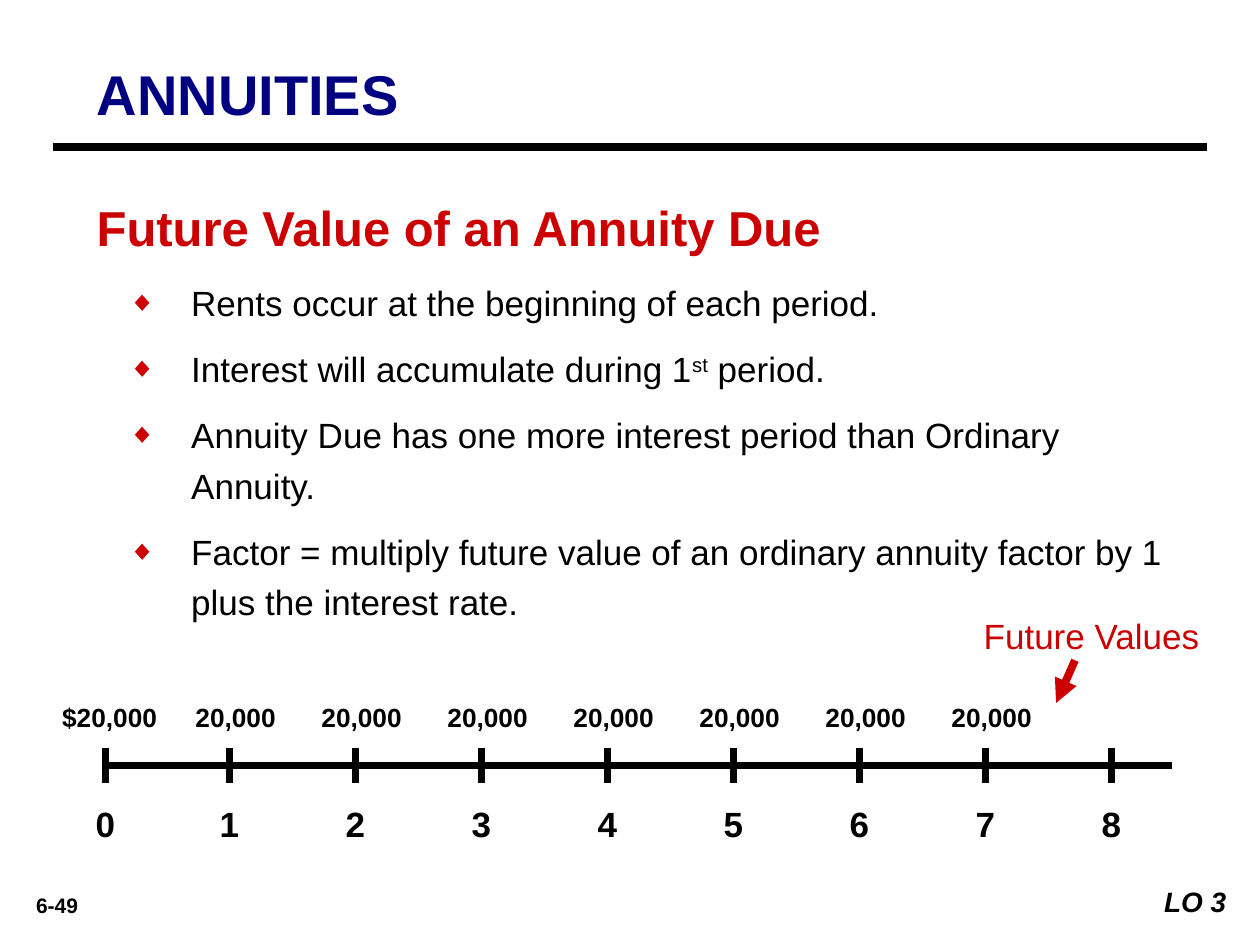
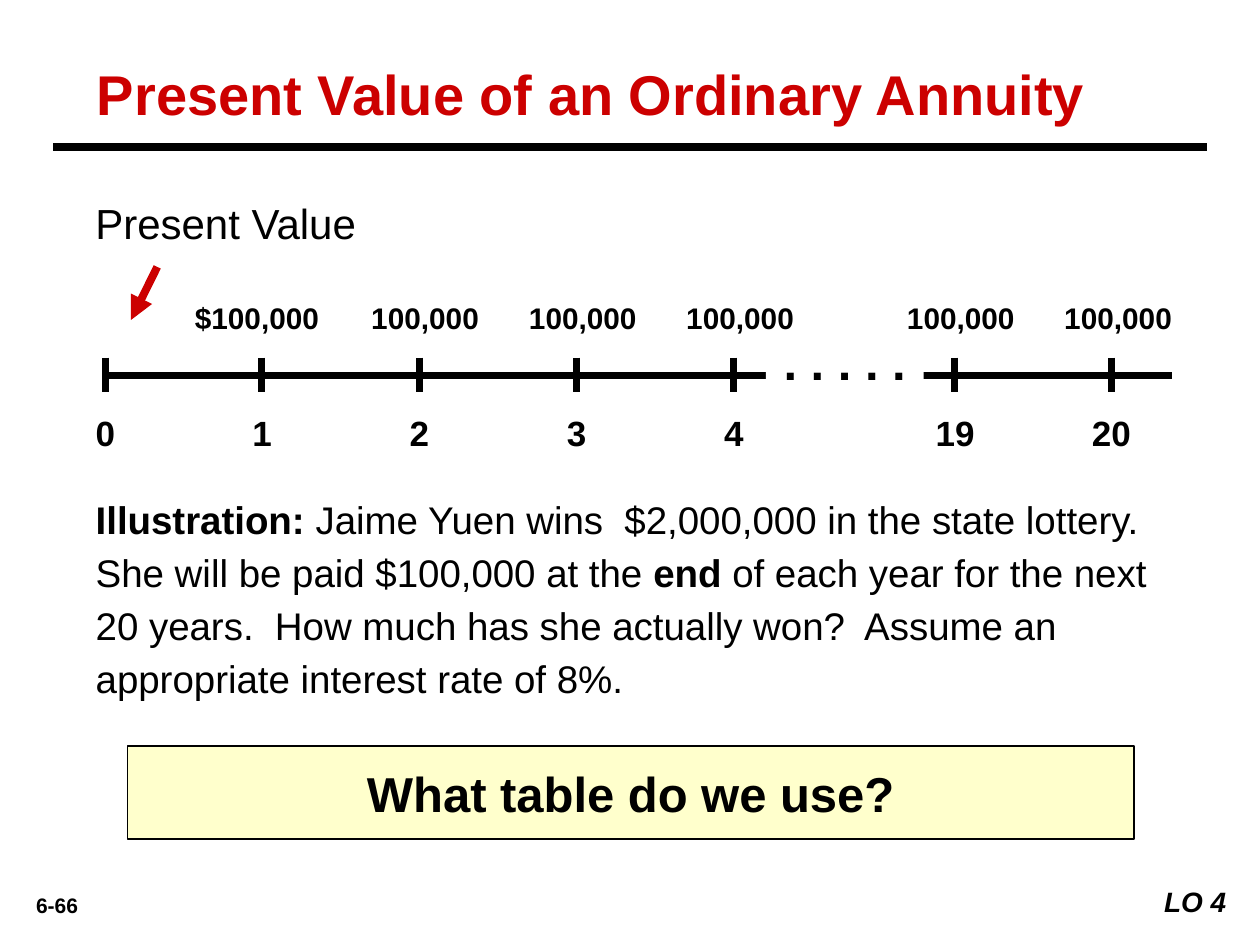
from lxml.etree import SubElement
from pptx import Presentation
from pptx.dml.color import RGBColor
from pptx.enum.shapes import MSO_CONNECTOR as Conn, MSO_SHAPE as Shape
from pptx.enum.text import MSO_ANCHOR as Anchor, MSO_AUTO_SIZE as Fit, PP_ALIGN as Align
from pptx.oxml.ns import qn
from pptx.util import Cm, Pt

BLACK, WHITE, RED, NAVY, CREAM = "000000", "FFFFFF", "CC0000", "000080", "FFFFCC"
TITLE_ONLY, TITLE_AND_BODY = 5, 1


def rgb(hex_text):
    return RGBColor.from_string(hex_text)


class Deck:
    """Holds the style and the current slide."""
    font = "Arial"

    def __init__(self):
        self.prs = Presentation()
        self.prs.slide_width, self.prs.slide_height = Cm(25.4), Cm(19.05)
        self.s = None

    def slide(self, layout, title, color, number, objective):
        """Start a slide with its title, rule and footers."""
        self.s = self.prs.slides.add_slide(self.prs.slide_layouts[layout])
        sp = self.s.shapes.title
        self.place(sp, 1.7, 1.07, 22.86, 1.55)
        self.add_runs(sp.text_frame.paragraphs[0], title, 32, color, True)
        self.line(1.07, 2.97, 24.33, 2.97, 4.5)
        self.text(0.2, 17.86, 1.9, 0.76, number, 12, bold=True)
        self.text(22.86, 17.7, 2.11, 0.94, objective, 16, bold=True, italic=True,
                  align=Align.RIGHT, fill=WHITE)

    def place(self, sp, x, y, w, h, anchor=Anchor.TOP, wrap=True):
        sp.left, sp.top, sp.width, sp.height = Cm(x), Cm(y), Cm(w), Cm(h)
        tf = sp.text_frame
        tf.auto_size, tf.word_wrap, tf.vertical_anchor = Fit.NONE, wrap, anchor

    def add_runs(self, p, runs, size, color=BLACK, bold=False, italic=False,
                 align=Align.LEFT, spacing=1.0):
        """Fill a paragraph; runs is a string or (text, bold, baseline) tuples."""
        p.alignment, p.line_spacing, p.space_before = align, spacing, Pt(0)
        if isinstance(runs, str):
            runs = [(runs, bold, None)]
        for content, is_bold, baseline in runs:
            r = p.add_run()
            r.text = content
            f = r.font
            f.name, f.size, f.bold, f.italic = self.font, Pt(size), is_bold, italic
            f.color.rgb = rgb(color)
            if baseline:
                r._r.get_or_add_rPr().set("baseline", str(baseline))

    def text(self, x, y, w, h, runs, size, color=BLACK, align=Align.CENTER, fill=None,
             border=None, anchor=Anchor.TOP, wrap=True, **style):
        """Add a text box, or a rectangle when it has a fill."""
        box = Cm(x), Cm(y), Cm(w), Cm(h)
        if fill:
            sp = self.s.shapes.add_shape(Shape.RECTANGLE, *box)
            sp.shadow.inherit = False
            sp.fill.solid()
            sp.fill.fore_color.rgb = rgb(fill)
            if border:
                sp.line.color.rgb, sp.line.width = rgb(border), Pt(1)
            else:
                sp.line.fill.background()
        else:
            sp = self.s.shapes.add_textbox(*box)
        self.place(sp, x, y, w, h, anchor, wrap)
        self.add_runs(sp.text_frame.paragraphs[0], runs, size, color, align=align, **style)

    def bullets(self, x, y, w, h, items):
        sp = self.s.placeholders[1]
        self.place(sp, x, y, w, h)
        tf = sp.text_frame
        for i, item in enumerate(items):
            p = tf.add_paragraph() if i else tf.paragraphs[0]
            p.level = 1
            self.add_runs(p, item, 20, spacing=1.2)
            p.space_before = Pt(9)
            pPr = p._p.get_or_add_pPr()
            pPr.set("marL", str(Cm(1.9)))
            pPr.set("indent", str(Cm(-1.27)))
            SubElement(SubElement(pPr, qn("a:buClr")), qn("a:srgbClr")).set("val", RED)
            SubElement(pPr, qn("a:buSzPct")).set("val", "80000")
            SubElement(pPr, qn("a:buFont")).set("typeface", self.font)
            SubElement(pPr, qn("a:buChar")).set("char", "◆")

    def line(self, x1, y1, x2, y2, width, color=BLACK, arrow=False):
        c = self.s.shapes.add_connector(Conn.STRAIGHT, Cm(x1), Cm(y1), Cm(x2), Cm(y2))
        c.line.color.rgb, c.line.width = rgb(color), Pt(width)
        spPr = c._element.spPr
        if arrow:
            SubElement(spPr.find(qn("a:ln")), qn("a:tailEnd")).set("type", "triangle")
        SubElement(spPr, qn("a:effectLst"))

    def timeline(self, y, ticks, amounts, size, rise):
        """Draw an axis; ticks and amounts are (centre, text) pairs."""
        self.line(2.2, y, 23.62, y, 4)
        for x, label in ticks:
            self.line(x, y - 0.35, x, y + 0.35, 4)
            self.text(x - 1.06, y + 0.62, 2.13, 1.09, label, 20, bold=True)
        for x, amount in amounts:
            self.text(x - 1.7, y - rise, 3.4, 0.95, amount, size, bold=True)


def main():
    deck = Deck()

    # Annuity due: rules and timeline of payments
    deck.slide(TITLE_AND_BODY, "ANNUITIES", NAVY, "6-49", "LO 3")
    deck.text(1.7, 3.8, 23.37, 1.42, "Future Value of an Annuity Due", 28, RED,
              Align.LEFT, bold=True, spacing=1.05)
    deck.bullets(1.7, 5.38, 22.02, 7.59, [
        "Rents occur at the beginning of each period.",
        [("Interest will accumulate during 1", False, None), ("st", False, 30000),
         (" period.", False, None)],
        "Annuity Due has one more interest period than Ordinary Annuity.",
        "Factor = multiply future value of an ordinary annuity factor by 1 plus the "
        "interest rate.",
    ])
    ticks = [(2.12, "0")] + [(4.62 + 2.54 * i, str(i + 1)) for i in range(8)]
    amounts = [(2.21 + 2.54 * i, "20,000" if i else "$20,000") for i in range(8)]
    deck.timeline(15.43, ticks, amounts, 15, 1.41)
    deck.line(21.67, 13.31, 21.29, 14.17, 4.5, RED, arrow=True)
    deck.text(19.25, 12.27, 5.51, 1.09, "Future Values", 20, RED)

    # Ordinary annuity: timeline with a gap, then the illustration
    deck.slide(TITLE_ONLY, "Present Value of an Ordinary Annuity", RED, "6-66", "LO 4")
    deck.text(0.84, 3.86, 7.42, 1.27, "Present Value", 24)
    deck.line(3.17, 5.38, 2.64, 6.45, 4.5, RED, arrow=True)
    ticks = [(2.12, "0")] + [(5.28 + 3.17 * i, str(i + 1)) for i in range(4)]
    ticks += [(19.25, "19"), (22.4, "20")]
    centres = [8.57, 11.75, 14.92, 19.37, 22.54]
    amounts = [(5.18, "$100,000")] + [(x, "100,000") for x in centres]
    deck.timeline(7.56, ticks, amounts, 17, 1.64)
    deck.text(15.44, 7.19, 3.18, 0.84, ". . . . .", 28, fill=WHITE, anchor=Anchor.MIDDLE,
              wrap=False, bold=True, spacing=0.15)
    deck.text(1.68, 9.73, 22.45, 4.52, [
        ("Illustration: ", True, None),
        ("Jaime Yuen wins  $2,000,000 in the state lottery. She will be paid $100,000 "
         "at the ", False, None),
        ("end", True, None),
        (" of each year for the next 20 years.  How much has she actually won?  Assume "
         "an appropriate interest rate of 8%.", False, None),
    ], 22, align=Align.LEFT, spacing=1.15)
    deck.text(2.57, 15.04, 20.29, 1.88, "What table do we use?", 28, fill=CREAM,
              border=BLACK, anchor=Anchor.MIDDLE, wrap=False, bold=True)

    deck.prs.save("out.pptx")


if __name__ == "__main__":
    main()
